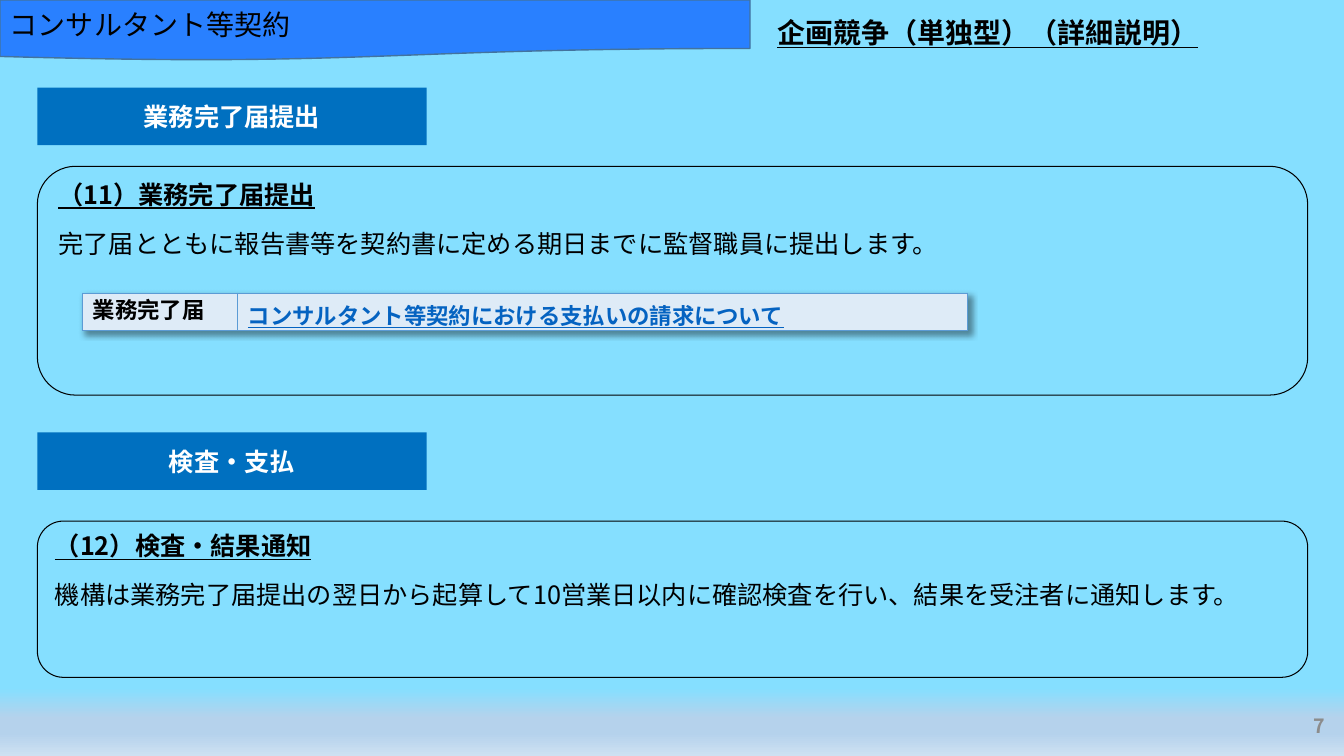
from lxml import etree
from pptx import Presentation
from pptx import util as u
from pptx.dml.color import RGBColor
from pptx.enum import shapes, text
from pptx.oxml import parse_xml
from pptx.oxml.ns import nsdecls, qn

COLORS = {
    "black": "000000", "white": "FFFFFF", "gray": "8C8C8C",
    "banner": "2980FF", "banner_line": "43739E", "label": "0070C0",
    "cell": "DEEBF7", "border": "5B9BD5", "link": "0563C1",
    "sky": "85DFFF", "haze": "B5D2EC", "pale": "CEE1F2",
}
FONT = "Noto Sans CJK JP"
WIDTH, HEIGHT = u.Inches(13.33), u.Inches(7.5)
LEFT, PANEL_W, LABEL_W, LABEL_H = 2.78, 94.52, 28.96, 7.6
SECTIONS = [  # label, its row, panel row, panel rows, heading, body
    ("業務完了届提出", 11.6, 22, 30.27, "（11）業務完了届提出",
     "完了届とともに報告書等を契約書に定める期日までに監督職員に提出します。"),
    ("検査・支払", 57.2, 68.93, 20.67, "（12）検査・結果通知",
     "機構は業務完了届提出の翌日から起算して10営業日以内に確認検査を行い、結果を受注者に通知します。"),
]


def rgb(name):
    return RGBColor.from_string(COLORS[name])


def box(x, y, w, h):
    """Turn percentages of the slide's size into left, top, width, height."""
    return [int(size * share / 100)
            for size, share in zip((WIDTH, HEIGHT) * 2, (x, y, w, h))]


def add_run(p, words, size, color="black", bold=False, underline=False, font=FONT):
    r = p.add_run()
    r.text = words
    r.font.size, r.font.bold, r.font.underline = u.Pt(size), bold, underline
    r.font.color.rgb = rgb(color)
    r.font.name = font
    ea = etree.Element(qn("a:ea"), typeface=font)
    r.font._element.find(qn("a:latin")).addnext(ea)


def add_box(s, kind, place, fill=None, line=None, line_width=0.75,
            anchor=text.MSO_ANCHOR.MIDDLE, align=text.PP_ALIGN.LEFT):
    sp = s.shapes.add_shape(kind, *box(*place))
    sp.shadow.inherit = False
    for part, color in ((sp.fill, fill), (sp.line.fill, line)):
        if color:
            part.solid()
            part.fore_color.rgb = rgb(color)
        else:
            part.background()
    if line:
        sp.line.width = u.Pt(line_width)
    tf = sp.text_frame
    tf.word_wrap, tf.vertical_anchor = True, anchor
    tf.paragraphs[0].alignment = align
    return tf


def add_section(s, label, label_y, panel_y, panel_h, heading, body):
    tf = add_box(s, shapes.MSO_SHAPE.RECTANGLE, (LEFT, label_y, LABEL_W, LABEL_H),
                 fill="label", align=text.PP_ALIGN.CENTER)
    add_run(tf.paragraphs[0], label, 18, "white", bold=True)
    tf = add_box(s, shapes.MSO_SHAPE.ROUNDED_RECTANGLE,
                 (LEFT, panel_y, PANEL_W, panel_h), line="black",
                 anchor=text.MSO_ANCHOR.TOP)
    add_run(tf.paragraphs[0], heading, 18, bold=True, underline=True)
    p = tf.add_paragraph()
    p.alignment, p.space_before = text.PP_ALIGN.LEFT, u.Pt(15.5)
    add_run(p, body, 18)
    for p in tf.paragraphs:
        p.line_spacing = 0.9


def format_cell(cell):
    cell.fill.solid()
    cell.fill.fore_color.rgb = rgb("cell")
    tc_pr = cell._tc.get_or_add_tcPr()
    for i, side in enumerate(("lnL", "lnR", "lnT", "lnB")):
        tc_pr.insert(i, parse_xml(
            f'<a:{side} {nsdecls("a")} w="12700"><a:solidFill>'
            f'<a:srgbClr val="{COLORS["border"]}"/></a:solidFill></a:{side}>'))


def add_form_table(s):
    tbl = s.shapes.add_table(1, 2, *box(6.15, 38.8, 65.86, 4.93)).table
    tbl.first_row = tbl.horz_banding = False
    tbl._tbl.tblPr.insert(0, parse_xml(
        f'<a:effectLst {nsdecls("a")}><a:outerShdw blurRad="50800" dist="38100" '
        'dir="2700000" algn="tl" rotWithShape="0"><a:srgbClr val="000000">'
        '<a:alpha val="40000"/></a:srgbClr></a:outerShdw></a:effectLst>'))
    entries = [("業務完了届", 11.55, "black", False, "Arial"),
               ("コンサルタント等契約における支払いの請求について", 54.31, "link", True, FONT)]
    for i, (words, share, color, underline, font) in enumerate(entries):
        tbl.columns[i].width = int(WIDTH * share / 100)
        cell = tbl.cell(0, i)
        format_cell(cell)
        add_run(cell.text_frame.paragraphs[0], words, 16, color, True, underline, font)


def set_background(s):
    fill = s.background.fill
    fill.gradient()
    grad = s.background._cSld.find(".//" + qn("a:gradFill"))
    stops = "".join(
        f'<a:gs pos="{pos}000"><a:srgbClr val="{COLORS[name]}"/></a:gs>'
        for pos, name in ((91, "sky"), (95, "haze"), (97, "haze"), (100, "pale")))
    grad.getparent().replace(grad, parse_xml(
        f'<a:gradFill {nsdecls("a")} rotWithShape="1"><a:gsLst>{stops}</a:gsLst>'
        '<a:lin ang="5400000" scaled="0"/></a:gradFill>'))


def set_title(s, words):
    sp = s.shapes.title
    sp.left, sp.top, sp.width, sp.height = box(57.09, 1.33, 38.03, 5.87)
    tf = sp.text_frame
    tf.word_wrap, tf.vertical_anchor = True, text.MSO_ANCHOR.TOP
    tf.auto_size = text.MSO_AUTO_SIZE.SHAPE_TO_FIT_TEXT
    p = tf.paragraphs[0]
    p.alignment = text.PP_ALIGN.LEFT
    add_run(p, words, 20, bold=True, underline=True)


def add_page_number(s, number):
    tf = s.shapes.add_textbox(*box(76.82, 93.33, 22.51, 5.33)).text_frame
    tf.word_wrap, tf.vertical_anchor = True, text.MSO_ANCHOR.MIDDLE
    p = tf.paragraphs[0]
    p.alignment = text.PP_ALIGN.RIGHT
    add_run(p, number, 14, "gray", bold=True)


def main():
    prs = Presentation()
    prs.slide_width, prs.slide_height = WIDTH, HEIGHT
    s = prs.slides.add_slide(prs.slide_layouts[5])
    set_background(s)
    set_title(s, "企画競争（単独型）（詳細説明）")
    tf = add_box(s, shapes.MSO_SHAPE.FLOWCHART_DOCUMENT, (0, 0, 55.81, 8),
                 fill="banner", line="banner_line", line_width=1)
    add_run(tf.paragraphs[0], "コンサルタント等契約", 20)
    for section in SECTIONS:
        add_section(s, *section)
    add_form_table(s)
    add_page_number(s, "7")
    prs.save("out.pptx")


if __name__ == "__main__":
    main()
